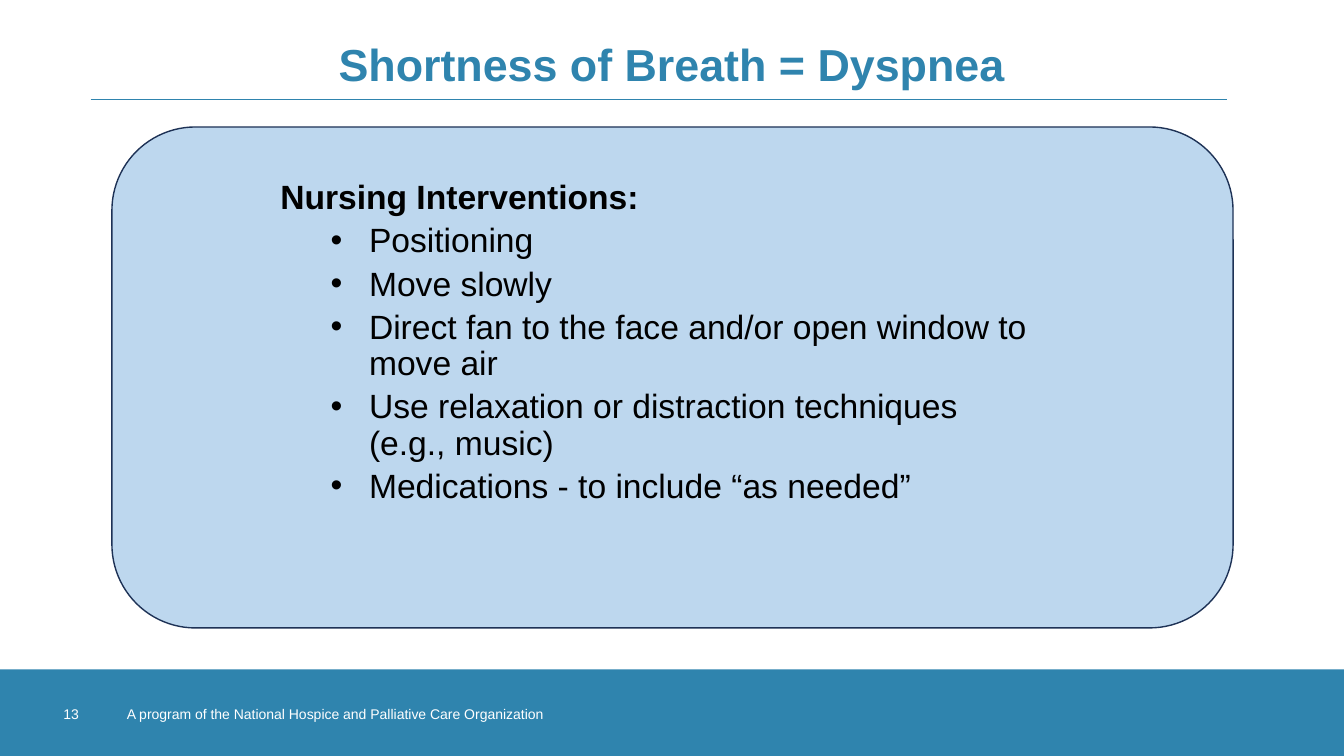
import dataclasses

import lxml.etree
import pptx
import pptx.dml.color
import pptx.enum.shapes
import pptx.enum.text
import pptx.oxml.ns
import pptx.util

Inches = pptx.util.Inches
Pt = pptx.util.Pt
qn = pptx.oxml.ns.qn
rgb = pptx.dml.color.RGBColor.from_string


@dataclasses.dataclass(frozen=True)
class Theme:
    font: str = "Arial"
    accent: str = "2F84AE"
    panel: str = "BDD7EE"
    outline: str = "1E3256"
    ink: str = "000000"
    paper: str = "FFFFFF"
    title_size: int = 32
    body_size: int = 24
    footer_size: int = 10
    line_spacing: float = 0.9


THEME = Theme()
SLIDE_WIDTH, SLIDE_HEIGHT = 13.33, 7.5
INTERVENTIONS = [
    "Positioning",
    "Move slowly",
    "Direct fan to the face and/or open window to move air",
    "Use relaxation or distraction techniques (e.g., music)",
    "Medications - to include “as needed”",
]


def place(shape, left, top, width, height):
    shape.left, shape.top = Inches(left), Inches(top)
    shape.width, shape.height = Inches(width), Inches(height)


def write(paragraph, words, size, color, bold=False):
    run = paragraph.add_run()
    run.text = words
    run.font.name = THEME.font
    run.font.size = Pt(size)
    run.font.bold = bold
    run.font.color.rgb = rgb(color)


def set_bullet(paragraph, margin=0, hanging=0, symbol=None):
    properties = paragraph._p.get_or_add_pPr()
    properties.set("marL", str(Inches(margin)))
    properties.set("indent", str(-Inches(hanging)))
    if symbol:
        lxml.etree.SubElement(properties, qn("a:buChar")).set("char", symbol)
    else:
        lxml.etree.SubElement(properties, qn("a:buNone"))


def add_block(slide, kind, box, fill, outline=None):
    block = slide.shapes.add_shape(kind, *map(Inches, box))
    block.shadow.inherit = False
    block.fill.solid()
    block.fill.fore_color.rgb = rgb(fill)
    if outline:
        block.line.color.rgb = rgb(outline)
        block.line.width = Pt(1)
    else:
        block.line.fill.background()
    return block


def add_heading(slide, left, top, width, height):
    heading = slide.shapes.title
    place(heading, left, top, width, height)
    frame = heading.text_frame
    frame.word_wrap = True
    frame.auto_size = pptx.enum.text.MSO_AUTO_SIZE.NONE
    frame.vertical_anchor = pptx.enum.text.MSO_ANCHOR.MIDDLE
    paragraph = frame.paragraphs[0]
    paragraph.alignment = pptx.enum.text.PP_ALIGN.CENTER
    paragraph.line_spacing = THEME.line_spacing
    write(paragraph, "Shortness of Breath = Dyspnea", THEME.title_size, THEME.accent, True)

    rule_left, rule_top = Inches(left + 0.15), Inches(top + 0.71)
    rule = slide.shapes.add_connector(
        pptx.enum.shapes.MSO_CONNECTOR.STRAIGHT,
        rule_left, rule_top, Inches(left + width - 0.41), rule_top)
    rule.line.color.rgb = rgb(THEME.accent)
    rule.line.width = Pt(0.5)
    lxml.etree.SubElement(rule._element.spPr, qn("a:effectLst"))


def add_interventions(slide, left, top, width, height):
    panel = add_block(slide, pptx.enum.shapes.MSO_SHAPE.ROUNDED_RECTANGLE,
                      (left, top, width, height), THEME.panel, THEME.outline)
    slide.shapes.title._element.addprevious(panel._element)

    body = slide.placeholders[1]
    place(body, left + 1.57, top + 0.48, width - 3.4, height - 0.96)
    frame = body.text_frame
    frame.word_wrap = True
    frame.auto_size = pptx.enum.text.MSO_AUTO_SIZE.NONE
    lead = frame.paragraphs[0]
    set_bullet(lead)
    lead.space_before = Pt(0)
    lead.line_spacing = THEME.line_spacing
    write(lead, "Nursing Interventions:", THEME.body_size, THEME.ink, True)
    for intervention in INTERVENTIONS:
        item = frame.add_paragraph()
        item.level = 1
        set_bullet(item, 0.88, 0.38, "•")
        item.space_before = Pt(5)
        item.line_spacing = THEME.line_spacing
        write(item, intervention, THEME.body_size, THEME.ink)


def add_footer(slide, left, top, width, height):
    band = add_block(slide, pptx.enum.shapes.MSO_SHAPE.RECTANGLE,
                     (left, top, width, height), THEME.accent)
    slide.shapes.title._element.addprevious(band._element)
    credit = "A program of the National Hospice and Palliative Care Organization"
    for words, offset, span in ((credit, 1.16, 4.63), ("13", 0.53, 0.5)):
        label = slide.shapes.add_textbox(
            Inches(left + offset), Inches(top + 0.31), Inches(span), Inches(0.4))
        label.text_frame.word_wrap = True
        write(label.text_frame.paragraphs[0], words, THEME.footer_size, THEME.paper)


def main():
    deck = pptx.Presentation()
    deck.slide_width = Inches(SLIDE_WIDTH)
    deck.slide_height = Inches(SLIDE_HEIGHT)
    slide = deck.slides.add_slide(deck.slide_layouts[1])
    slide.background.fill.solid()
    slide.background.fill.fore_color.rgb = rgb(THEME.paper)
    add_footer(slide, 0, 6.64, SLIDE_WIDTH, 0.86)
    add_interventions(slide, 1.11, 1.26, 11.12, 4.97)
    add_heading(slide, 0.75, 0.28, 11.83, 0.77)
    deck.save("out.pptx")


if __name__ == "__main__":
    main()
